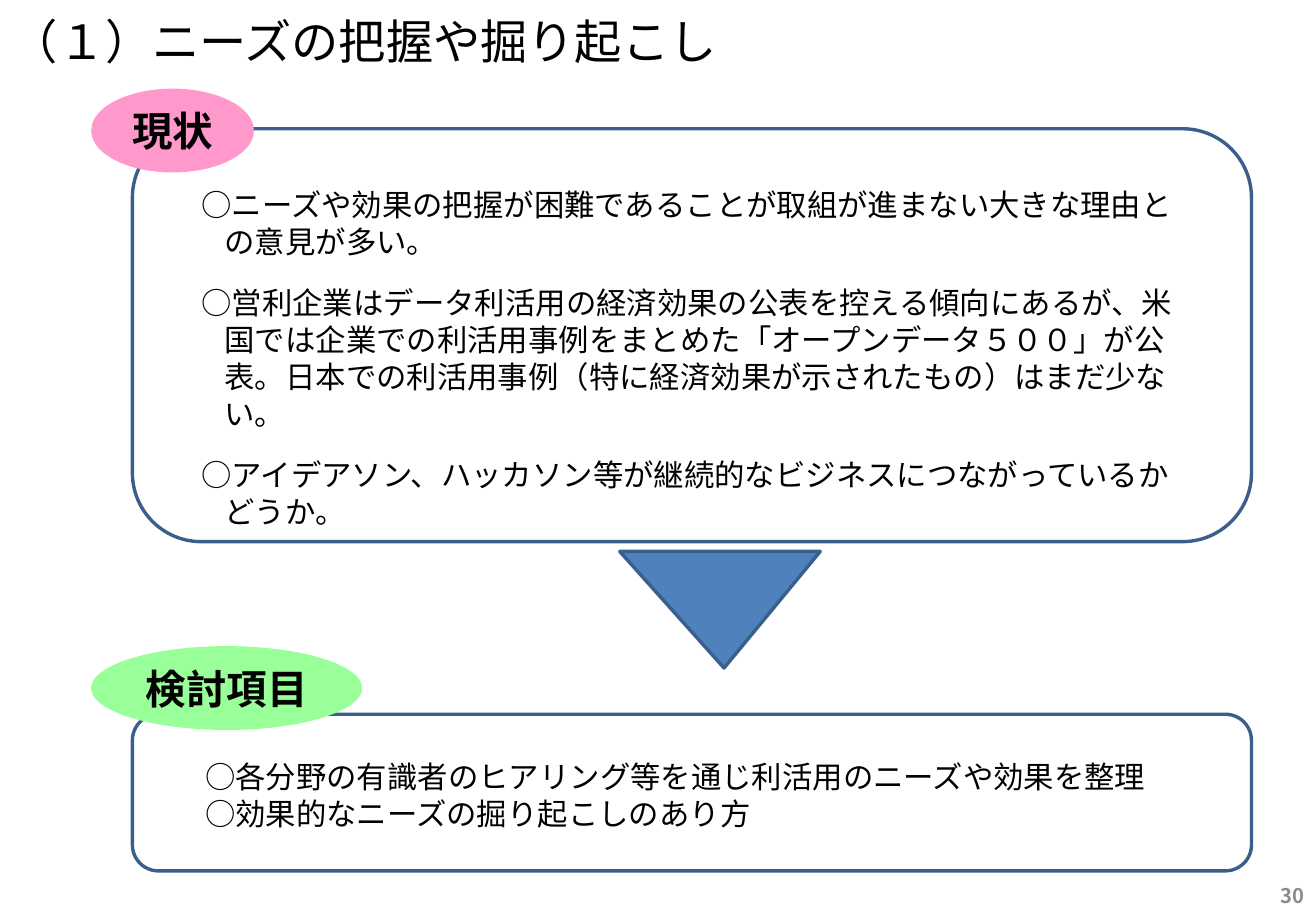
import pptx
import pptx.util
from lxml import etree
from pptx.dml.color import RGBColor
from pptx.enum.shapes import MSO_SHAPE
from pptx.enum.text import MSO_ANCHOR, PP_ALIGN
from pptx.oxml.ns import qn

Pt = pptx.util.Pt
Inches = pptx.util.Inches

SLIDE_WIDTH, SLIDE_HEIGHT = Inches(10.83), Inches(7.5)
FONT = "Noto Sans CJK JP"

BLACK = RGBColor(0x00, 0x00, 0x00)
WHITE = RGBColor(0xFF, 0xFF, 0xFF)
GRAY = RGBColor(0x8C, 0x8C, 0x8C)
NAVY = RGBColor(0x3A, 0x5F, 0x8C)
BLUE = RGBColor(0x4F, 0x81, 0xBD)
PINK = RGBColor(0xFF, 0x99, 0xCC)
GREEN = RGBColor(0x99, 0xFF, 0x99)

# Shared edges, in percent of the slide's size
PANEL_LEFT, PANEL_WIDTH = 10.06, 85.04
BADGE_LEFT, BADGE_HEIGHT = 6.93, 9.2

TITLE = "（１）ニーズの把握や掘り起こし"
CURRENT_STATE = [
    "○ニーズや効果の把握が困難であることが取組が進まない大きな理由との意見が多い。",
    "○営利企業はデータ利活用の経済効果の公表を控える傾向にあるが、"
    "米国では企業での利活用事例をまとめた「オープンデータ５００」が公表。"
    "日本での利活用事例（特に経済効果が示されたもの）はまだ少ない。",
    "○アイデアソン、ハッカソン等が継続的なビジネスにつながっているかどうか。",
]
STUDY_ITEMS = [
    "○各分野の有識者のヒアリング等を通じ利活用のニーズや効果を整理",
    "○効果的なニーズの掘り起こしのあり方",
]

TITLE_FORMAT = {"alignment": PP_ALIGN.LEFT, "line_spacing": Pt(35), "space_before": Pt(0)}
BODY_FORMAT = {"alignment": PP_ALIGN.LEFT, "line_spacing": Pt(22)}
BADGE_FORMAT = {"alignment": PP_ALIGN.CENTER}
NUMBER_FORMAT = {"alignment": PP_ALIGN.RIGHT}


def apply_format(target, values):
    for name, value in values.items():
        setattr(target, name, value)


def box(left, top, width, height):
    """Turn percentages of the slide into lengths."""
    return (int(SLIDE_WIDTH * left / 100), int(SLIDE_HEIGHT * top / 100),
            int(SLIDE_WIDTH * width / 100), int(SLIDE_HEIGHT * height / 100))


def write(shape, lines, size, paragraph_format, color=BLACK, bold=False,
          anchor=MSO_ANCHOR.TOP, gap=0, hanging=0):
    frame = shape.text_frame
    apply_format(frame, {"word_wrap": True, "vertical_anchor": anchor})
    for index, line in enumerate(lines):
        paragraph = frame.paragraphs[0] if index == 0 else frame.add_paragraph()
        apply_format(paragraph, paragraph_format)
        if index and gap:
            paragraph.space_before = Pt(gap)
        if hanging:
            properties = paragraph._p.get_or_add_pPr()
            properties.set("marL", str(Inches(hanging)))
            properties.set("indent", str(-Inches(hanging)))
        run = paragraph.add_run()
        run.text = line
        apply_format(run.font, {"name": FONT, "size": Pt(size), "bold": bold})
        run.font.color.rgb = color
        east_asian = etree.SubElement(run._r.get_or_add_rPr(), qn("a:ea"))
        east_asian.set("typeface", FONT)


def add_shape(slide, kind, area, fill, outline=None):
    shape = slide.shapes.add_shape(kind, *box(*area))
    shape.shadow.inherit = False
    shape.fill.solid()
    shape.fill.fore_color.rgb = fill
    if outline is None:
        shape.line.fill.background()
    else:
        shape.line.color.rgb = outline
        shape.line.width = Pt(2)
    return shape


def add_panel(slide, top, height):
    area = (PANEL_LEFT, top, PANEL_WIDTH, height)
    add_shape(slide, MSO_SHAPE.ROUNDED_RECTANGLE, area, WHITE, NAVY)


def add_badge(slide, label, top, width, fill):
    area = (BADGE_LEFT, top, width, BADGE_HEIGHT)
    badge = add_shape(slide, MSO_SHAPE.OVAL, area, fill)
    apply_format(badge.text_frame, {"margin_left": 0, "margin_right": 0})
    write(badge, [label], 24, BADGE_FORMAT, bold=True, anchor=MSO_ANCHOR.MIDDLE)


def add_text(slide, area, lines, size, paragraph_format, **options):
    write(slide.shapes.add_textbox(*box(*area)), lines, size, paragraph_format, **options)


def main():
    presentation = pptx.Presentation()
    apply_format(presentation, {"slide_width": SLIDE_WIDTH, "slide_height": SLIDE_HEIGHT})
    slide = presentation.slides.add_slide(presentation.slide_layouts[5])

    # Title
    title = slide.shapes.title
    apply_format(title, dict(zip(("left", "top", "width", "height"),
                                 box(-0.09, 0.4, 89.47, 7.6))))
    write(title, [TITLE], 28, TITLE_FORMAT)

    # Panels and their badges
    add_panel(slide, 14.13, 45.33)
    add_panel(slide, 78.4, 17.2)
    add_badge(slide, "現状", 9.73, 12.37, PINK)
    add_badge(slide, "検討項目", 70.93, 20.59, GREEN)

    # Panel texts
    add_text(slide, (14.4, 19.73, 77.29, 39.07), CURRENT_STATE, 18, BODY_FORMAT,
             gap=14, hanging=0.19)
    add_text(slide, (14.68, 82.53, 79.32, 9.47), STUDY_ITEMS, 18, BODY_FORMAT)

    # Downward triangle from the current state to the study items
    triangle = add_shape(slide, MSO_SHAPE.ISOSCELES_TRIANGLE,
                         (47.09, 60.53, 15.24, 12.8), BLUE, NAVY)
    triangle.adjustments[0] = 0.48
    triangle.rotation = 180

    # Page number
    add_text(slide, (76.64, 96.53, 23.36, 3.47), ["30"], 12, NUMBER_FORMAT,
             color=GRAY, bold=True, anchor=MSO_ANCHOR.MIDDLE)

    presentation.save("out.pptx")


if __name__ == "__main__":
    main()
